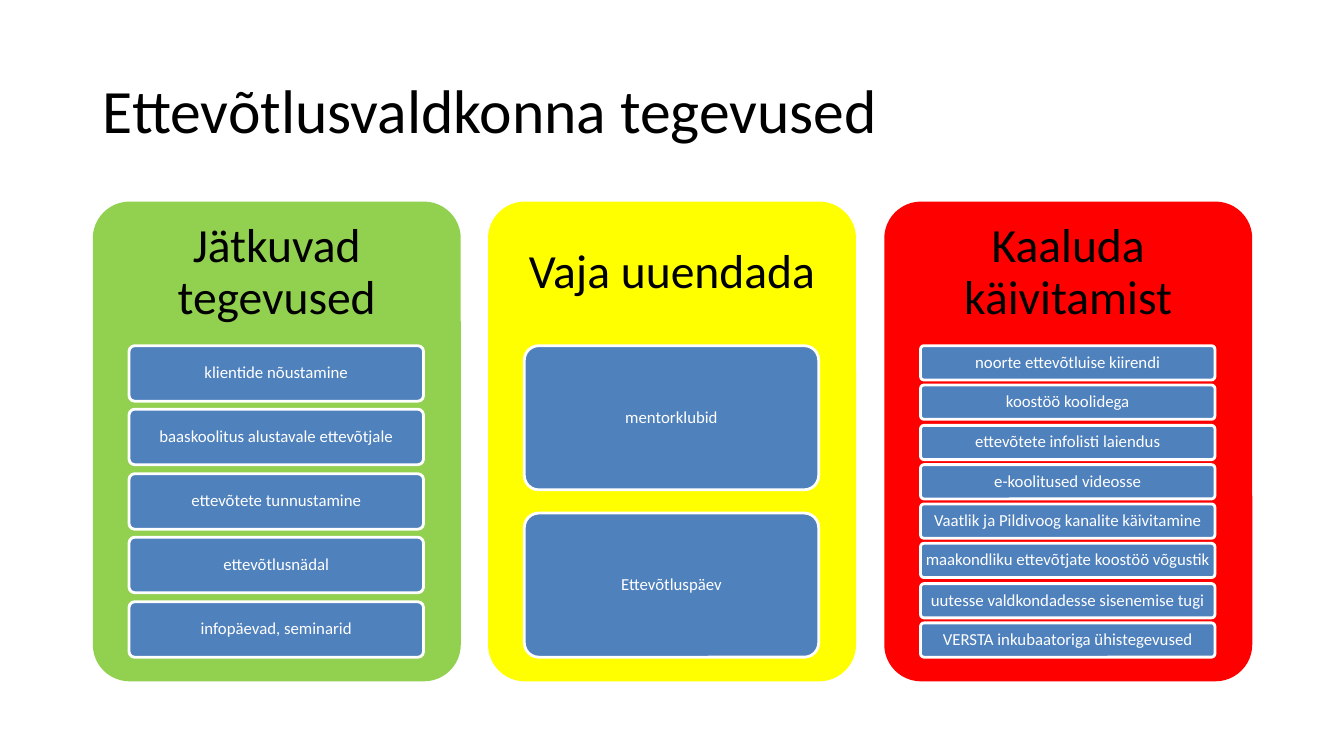
from dataclasses import dataclass

from pptx import Presentation
from pptx.dml.color import RGBColor
from pptx.enum.shapes import MSO_SHAPE
from pptx.enum.text import MSO_ANCHOR, PP_ALIGN
from pptx.util import Emu, Pt

ROUND_RECT = MSO_SHAPE.ROUNDED_RECTANGLE
MIDDLE = MSO_ANCHOR.MIDDLE
LEFT, CENTER = PP_ALIGN.LEFT, PP_ALIGN.CENTER
EMU_PER_PX = 9144  # 100 px to the inch


@dataclass(frozen=True)
class Theme:
    font: str = "Calibri"
    title_size: int = 44
    heading_size: int = 34
    card_size: int = 12
    dark: str = "000000"
    light: str = "FFFFFF"
    card: str = "4F81BD"
    green: str = "92D050"
    yellow: str = "FFFF00"
    red: str = "FF0000"


def px(n):
    return Emu(round(n) * EMU_PER_PX)


class SlideBuilder:
    def __init__(self, slide, theme):
        self.slide = slide
        self.theme = theme

    def set_text(self, sp, text, size, color, align, inset):
        tf = sp.text_frame
        tf.text = text
        tf.word_wrap = True
        tf.vertical_anchor = MIDDLE
        tf.margin_left = tf.margin_right = px(inset)
        tf.margin_top = tf.margin_bottom = px(inset)
        p = tf.paragraphs[0]
        p.alignment = align
        p.line_spacing = 0.9
        font = p.runs[0].font
        font.name = self.theme.font
        font.size = Pt(size)
        font.color.rgb = RGBColor.from_string(color)

    def text(self, box, text, size, align, inset):
        sp = self.slide.shapes.add_textbox(*map(px, box))
        self.set_text(sp, text, size, self.theme.dark, align, inset)

    def panel(self, box, fill):
        sp = self.slide.shapes.add_shape(ROUND_RECT, *map(px, box))
        sp.adjustments[0] = 0.1
        sp.shadow.inherit = False
        sp.fill.solid()
        sp.fill.fore_color.rgb = RGBColor.from_string(fill)
        sp.line.fill.background()
        return sp

    def card(self, box, text):
        sp = self.panel(box, self.theme.card)
        sp.line.color.rgb = RGBColor.from_string(self.theme.light)
        sp.line.width = Pt(2)
        self.set_text(sp, text, self.theme.card_size, self.theme.light, CENTER, 0)

    def column(self, left, fill, heading, items):
        self.panel((left, 200, 365, 476), fill)
        self.text((left + 4, 204, 357, 134), heading,
                  self.theme.heading_size, CENTER, 14)
        # Cards share the stack height; each gap is a fixed part of a card
        top, stack, gap = 343, 309, 0.154
        n = len(items)
        height = stack / (n + (n - 1) * gap)
        for i, item in enumerate(items):
            self.card((left + 36, top + i * height * (1 + gap), 292, height), item)


def main():
    prs = Presentation()
    prs.slide_width, prs.slide_height = px(1333), px(750)
    theme = Theme()
    s = SlideBuilder(prs.slides.add_slide(prs.slide_layouts[6]), theme)

    # Title
    s.text((92, 40, 1150, 145), "Ettevõtlusvaldkonna tegevused",
           theme.title_size, LEFT, 10)

    # Columns of activities
    columns = [
        (theme.green, "Jätkuvad tegevused", [
            "klientide nõustamine",
            "baaskoolitus alustavale ettevõtjale",
            "ettevõtete tunnustamine",
            "ettevõtlusnädal",
            "infopäevad, seminarid",
        ]),
        (theme.yellow, "Vaja uuendada", ["mentorklubid", "Ettevõtluspäev"]),
        (theme.red, "Kaaluda käivitamist", [
            "noorte ettevõtluise kiirendi",
            "koostöö koolidega",
            "ettevõtete infolisti laiendus",
            "e-koolitused videosse",
            "Vaatlik ja Pildivoog kanalite käivitamine",
            "maakondliku ettevõtjate koostöö võgustik",
            "uutesse valdkondadesse sisenemise tugi",
            "VERSTA inkubaatoriga ühistegevused",
        ]),
    ]
    for i, (fill, heading, items) in enumerate(columns):
        s.column(round(92 + i * 392.5), fill, heading, items)

    prs.save("out.pptx")


if __name__ == "__main__":
    main()
